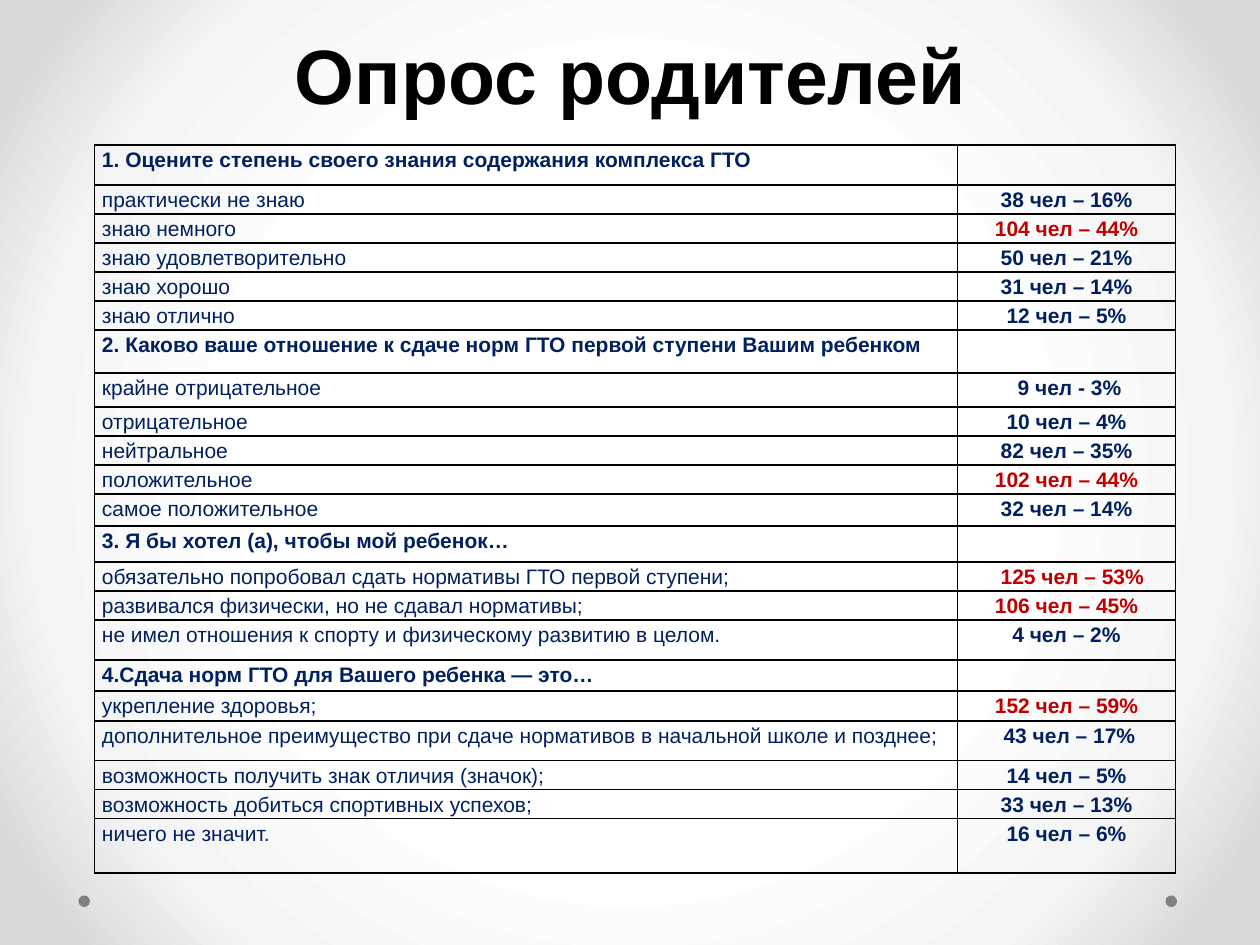
from dataclasses import dataclass

from lxml.etree import SubElement
from pptx import Presentation
from pptx.dml.color import RGBColor
from pptx.enum.shapes import MSO_SHAPE
from pptx.enum.text import MSO_ANCHOR, PP_ALIGN
from pptx.oxml import parse_xml
from pptx.oxml.ns import nsdecls, qn
from pptx.util import Pt


@dataclass(frozen=True)
class Theme:
    font: str = "Arial"
    black: str = "000000"
    navy: str = "002060"
    red: str = "C00000"
    gray: str = "808080"
    glow: tuple = ((50, "FFFFFF"), (76, "F4F4F4"), (92, "DADADA"))
    head: int = 44
    body: int = 12


THEME = Theme()
LOW = 15.4  # height of a plain answer row
NUDGE = 3.3  # one step to the right for a few results

# Row height, question
# Row height, answer, result, whether it stands out, steps to the right
ROWS = [
    (22.9, "1. Оцените степень своего знания содержания комплекса ГТО"),
    (LOW, "практически не знаю", "38 чел – 16%", False, 0),
    (LOW, "знаю немного", "104 чел – 44%", True, 0),
    (LOW, "знаю удовлетворительно", "50 чел – 21%", False, 0),
    (LOW, "знаю хорошо", "31 чел – 14%", False, 0),
    (LOW, "знаю отлично", "12 чел – 5%", False, 0),
    (24.6, "2. Каково ваше отношение к сдаче норм ГТО первой ступени Вашим ребенком"),
    (19.3, "крайне отрицательное", "9 чел - 3%", False, 1),
    (LOW, "отрицательное", "10 чел – 4%", False, 0),
    (LOW, "нейтральное", "82 чел – 35%", False, 0),
    (LOW, "положительное", "102 чел – 44%", True, 0),
    (18.3, "самое положительное", "32 чел – 14%", False, 0),
    (20.6, "3. Я бы хотел (а), чтобы мой ребенок…"),
    (LOW, "обязательно попробовал сдать нормативы ГТО первой ступени;",
     "125 чел – 53%", True, 2),
    (LOW, "развивался физически, но не сдавал нормативы;", "106 чел – 45%", True, 0),
    (22.9, "не имел отношения к спорту и физическому развитию в целом.",
     "4 чел – 2%", False, 0),
    (17.7, "4.Сдача норм ГТО для Вашего ребенка — это…"),
    (17.1, "укрепление здоровья;", "152 чел – 59%", True, 0),
    (22.6, "дополнительное преимущество при сдаче нормативов в начальной школе и позднее;",
     "43 чел – 17%", False, 1),
    (LOW, "возможность получить знак отличия (значок);", "14 чел – 5%", False, 0),
    (LOW, "возможность добиться спортивных успехов;", "33 чел – 13%", False, 0),
    (31, "ничего не значит.", "16 чел – 6%", False, 0),
]


def style(para, size, color, bold, align):
    para.alignment = align
    for run in para.runs:
        font = run.font
        font.name, font.size, font.bold = THEME.font, Pt(size), bold
        font.color.rgb = RGBColor.from_string(color)


def backdrop(slide):
    stops = "".join(
        f'<a:gs pos="{at * 1000}"><a:srgbClr val="{color}"/></a:gs>'
        for at, color in THEME.glow)
    slide.element.cSld.insert(0, parse_xml(
        f'<p:bg {nsdecls("p", "a")}><p:bgPr><a:gradFill rotWithShape="1">'
        f'<a:gsLst>{stops}</a:gsLst><a:path path="circle">'
        '<a:fillToRect l="50000" t="50000" r="50000" b="50000"/></a:path>'
        '</a:gradFill><a:effectLst/></p:bgPr></p:bg>'))


def dots(slide, left, top, width, size):
    for x in (left, left + width - size):
        dot = slide.shapes.add_shape(MSO_SHAPE.OVAL, Pt(x), Pt(top), Pt(size), Pt(size))
        dot.shadow.inherit = False
        dot.fill.solid()
        dot.fill.fore_color.rgb = RGBColor.from_string(THEME.gray)
        dot.line.fill.background()


def title(slide, left, top, width, height):
    frame = slide.shapes.add_textbox(Pt(left), Pt(top), Pt(width), Pt(height)).text_frame
    frame.word_wrap = True
    frame.vertical_anchor = MSO_ANCHOR.BOTTOM
    frame.text = "Опрос родителей"
    para = frame.paragraphs[0]
    para.line_spacing = Pt(58)
    style(para, THEME.head, THEME.black, True, PP_ALIGN.CENTER)


def border(cell):
    props = cell._tc.get_or_add_tcPr()
    for at, side in enumerate(("lnL", "lnR", "lnT", "lnB")):
        props.insert(at, parse_xml(
            f'<a:{side} {nsdecls("a")} w="{Pt(1)}"><a:solidFill>'
            f'<a:srgbClr val="{THEME.black}"/></a:solidFill></a:{side}>'))


def fill(cell, text, color, bold, align, shift=0):
    cell.margin_left, cell.margin_right = Pt(4.3 + shift), Pt(4.3)
    cell.margin_top = cell.margin_bottom = 0
    cell.fill.background()
    border(cell)
    para = cell.text_frame.paragraphs[0]
    para.line_spacing = 1.15
    if text:
        para.text = text
        style(para, THEME.body, color, bold, align)
    else:  # keeps an empty cell as low as a filled one
        SubElement(para._p, qn("a:endParaRPr"), sz=str(THEME.body * 100))


def survey(slide, left, top, width):
    high = sum(row[0] for row in ROWS)
    table = slide.shapes.add_table(
        len(ROWS), 2, Pt(left), Pt(top), Pt(width), Pt(high)).table
    table.first_row = table.horz_banding = False
    side = 124.6
    table.columns[0].width, table.columns[1].width = Pt(width - side), Pt(side)
    for at, (tall, text, *data) in enumerate(ROWS):
        table.rows[at].height = Pt(tall)
        result, hot, steps = data or ("", False, 0)
        fill(table.cell(at, 0), text, THEME.navy, not data, PP_ALIGN.JUSTIFY)
        fill(table.cell(at, 1), result, THEME.red if hot else THEME.navy,
             True, PP_ALIGN.CENTER, steps * NUDGE)


def main():
    deck = Presentation()
    deck.slide_width, deck.slide_height = Pt(720), Pt(540)
    slide = deck.slides.add_slide(deck.slide_layouts[6])
    backdrop(slide)
    dots(slide, 44.8, 511.7, 627.8, 6.6)
    title(slide, 36.6, 9.4, 648, 62.6)
    survey(slide, 54, 82.9, 617.8)
    deck.save("out.pptx")


if __name__ == "__main__":
    main()
